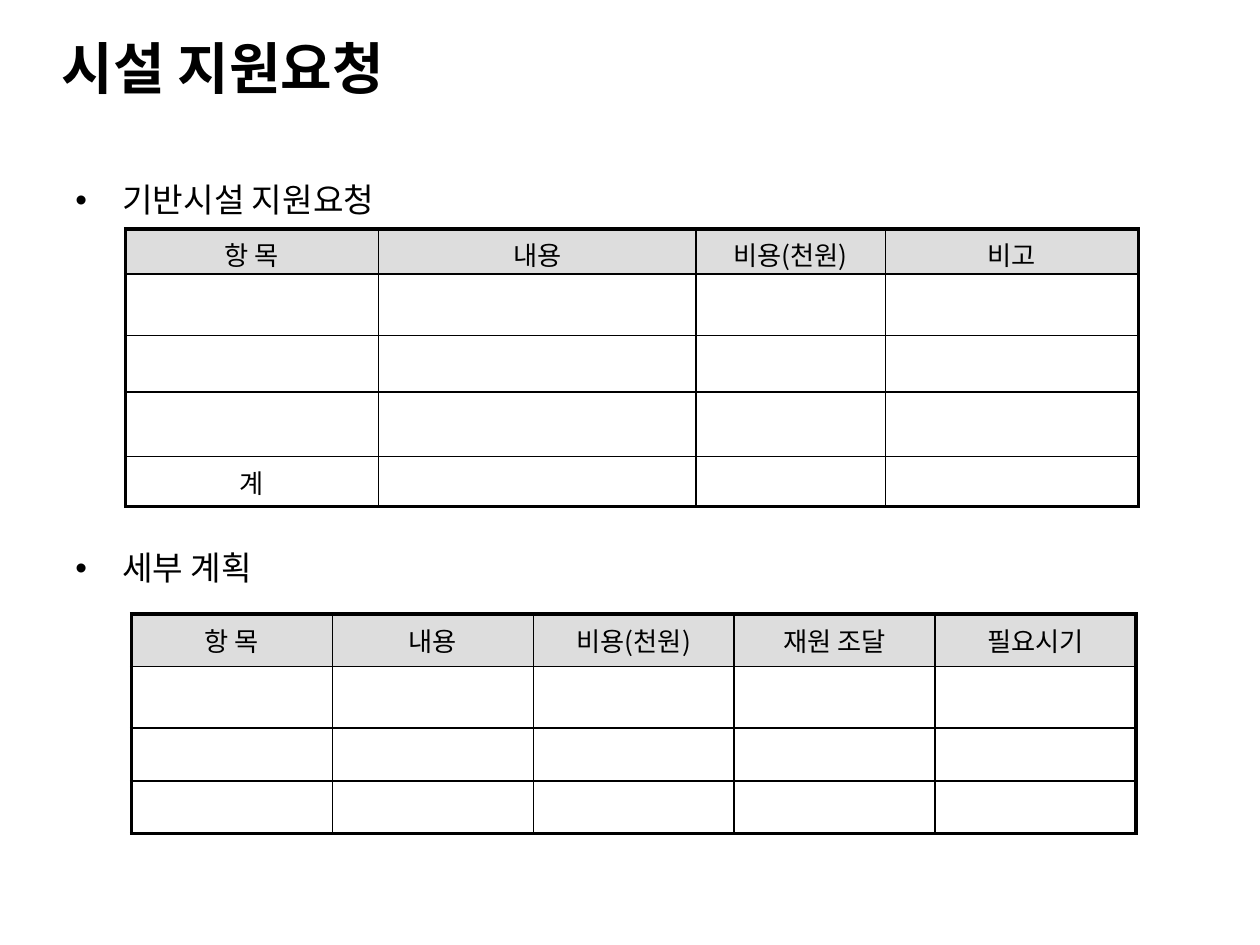
from dataclasses import dataclass

from lxml.etree import SubElement
from pptx import Presentation
from pptx.dml.color import RGBColor
from pptx.enum.text import MSO_ANCHOR, PP_ALIGN
from pptx.oxml import parse_xml
from pptx.oxml.ns import nsdecls, qn
from pptx.util import Cm, Pt


@dataclass(frozen=True)
class Theme:
    font: str = "Noto Sans CJK KR"
    ink: str = "000000"
    header_fill: str = "DDDDDD"
    title_size: float = 32
    body_size: float = 19
    table_size: float = 15
    outer_line: float = 2.25
    inner_line: float = 1


def apply_format(target, values):
    for name, value in values.items():
        setattr(target, name, value)


class SlideBuilder:
    def __init__(self, slide, theme):
        self.slide = slide
        self.theme = theme

    def add_run(self, paragraph, text, size, bold=False):
        run = paragraph.add_run()
        run.text = text
        apply_format(run.font, {"name": self.theme.font, "size": Pt(size), "bold": bold})
        run.font.color.rgb = RGBColor.from_string(self.theme.ink)
        SubElement(run.font._element, qn("a:ea"), typeface=self.theme.font)

    def add_text_frame(self, left, top, width, height, anchor):
        shape = self.slide.shapes.add_textbox(Cm(left), Cm(top), Cm(width), Cm(height))
        apply_format(shape.text_frame, {"word_wrap": True, "vertical_anchor": anchor})
        return shape.text_frame

    def add_title(self, text, *box):
        frame = self.add_text_frame(*box, MSO_ANCHOR.MIDDLE)
        self.add_run(frame.paragraphs[0], text, self.theme.title_size, bold=True)

    def add_bullets(self, texts, gap, *box):
        """Add bullets with a gap in points that leaves room for a table."""
        frame = self.add_text_frame(*box, MSO_ANCHOR.TOP)
        for index, text in enumerate(texts):
            paragraph = frame.add_paragraph() if index else frame.paragraphs[0]
            paragraph.line_spacing = 0.9
            if index:
                paragraph.space_before = Pt(gap)
            properties = paragraph._p.get_or_add_pPr()
            properties.set("marL", str(Cm(0.95)))
            properties.set("indent", str(-Cm(0.95)))
            SubElement(properties, qn("a:buFont"), typeface="Arial")
            SubElement(properties, qn("a:buChar"), char="•")
            self.add_run(paragraph, text, self.theme.body_size)

    def add_cell_borders(self, cell, outer_sides):
        properties = cell._tc.get_or_add_tcPr()
        for index, side in enumerate("LRTB"):
            width = self.theme.outer_line if side in outer_sides else self.theme.inner_line
            properties.insert(index, parse_xml(
                f'<a:ln{side} {nsdecls("a")} w="{Pt(width)}"><a:solidFill>'
                f'<a:srgbClr val="{self.theme.ink}"/></a:solidFill></a:ln{side}>'))

    def add_table(self, left, top, column_widths, row_heights, texts):
        """Add a table; texts maps (row, column) to the wording of a cell."""
        last_row, last_column = len(row_heights) - 1, len(column_widths) - 1
        table = self.slide.shapes.add_table(
            last_row + 1, last_column + 1, Cm(left), Cm(top),
            Cm(sum(column_widths)), Cm(sum(row_heights))).table
        apply_format(table, {"first_row": False, "horz_banding": False})
        for column, width in zip(table.columns, column_widths):
            column.width = Cm(width)
        for row_index, height in enumerate(row_heights):
            table.rows[row_index].height = Cm(height)
            for column_index in range(last_column + 1):
                cell = table.cell(row_index, column_index)
                cell.vertical_anchor = MSO_ANCHOR.MIDDLE
                if row_index == 0:
                    cell.fill.solid()
                    cell.fill.fore_color.rgb = RGBColor.from_string(self.theme.header_fill)
                else:
                    cell.fill.background()
                edges = {"L": column_index == 0, "R": column_index == last_column,
                         "T": row_index == 0, "B": row_index == last_row}
                self.add_cell_borders(cell, [side for side in edges if edges[side]])
                text = texts.get((row_index, column_index))
                if text:
                    paragraph = cell.text_frame.paragraphs[0]
                    paragraph.alignment = PP_ALIGN.CENTER
                    self.add_run(paragraph, text, self.theme.table_size)


def header_texts(*names):
    return {(0, column): name for column, name in enumerate(names)}


def main():
    presentation = Presentation()
    apply_format(presentation, {"slide_width": Cm(25.4), "slide_height": Cm(19.05)})
    slide = presentation.slides.add_slide(presentation.slide_layouts[6])
    builder = SlideBuilder(slide, Theme())

    builder.add_title("시설 지원요청", 1, 0.55, 22.86, 1.62)
    builder.add_table(
        2.53, 4.62, [5.1, 6.4, 3.82, 5.1], [0.9, 1.24, 1.14, 1.3, 0.9],
        header_texts("항 목", "내용", "비용(천원)", "비고") | {(4, 0): "계"})
    builder.add_table(
        2.65, 12.38, [4.05] * 5, [1.06, 1.24, 1.06, 1.06],
        header_texts("항 목", "내용", "비용(천원)", "재원 조달", "필요시기"))
    builder.add_bullets(["기반시설 지원요청", "세부 계획"], 190, 1.27, 3.58, 22.86, 13.49)

    presentation.save("out.pptx")


if __name__ == "__main__":
    main()
